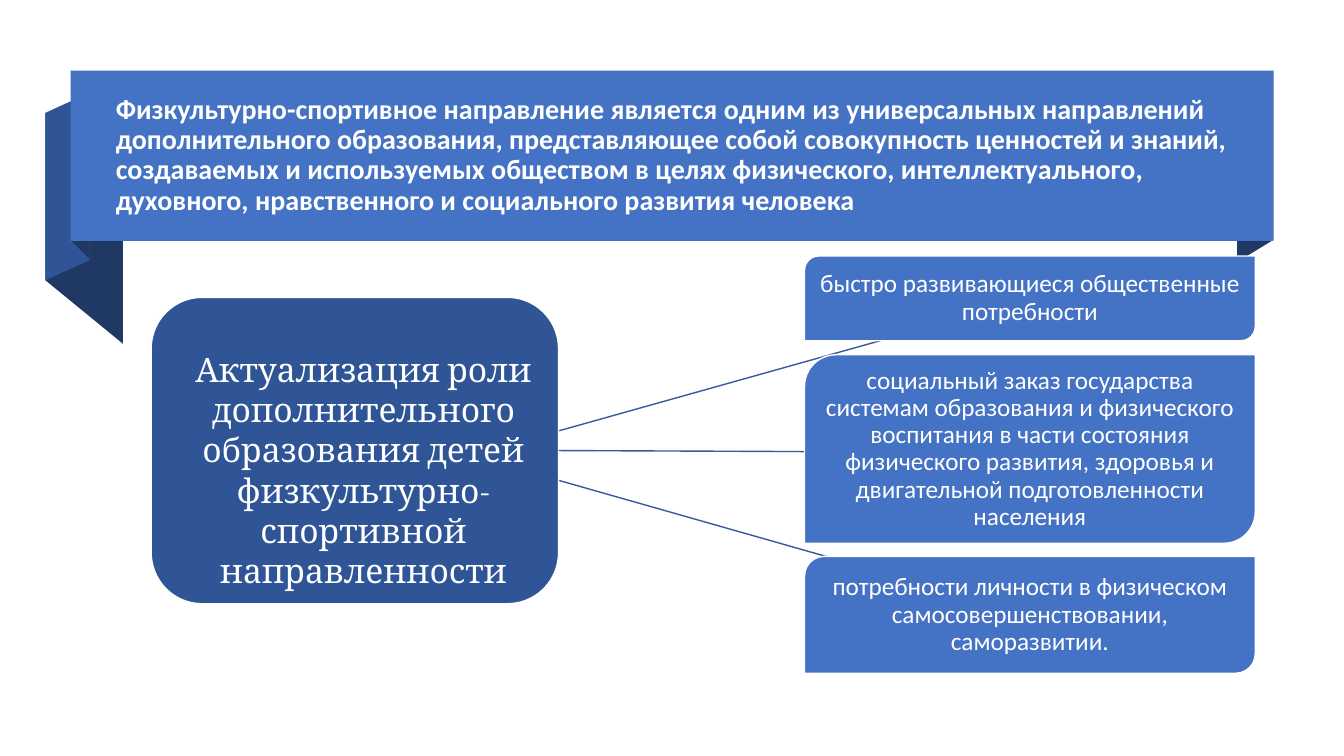
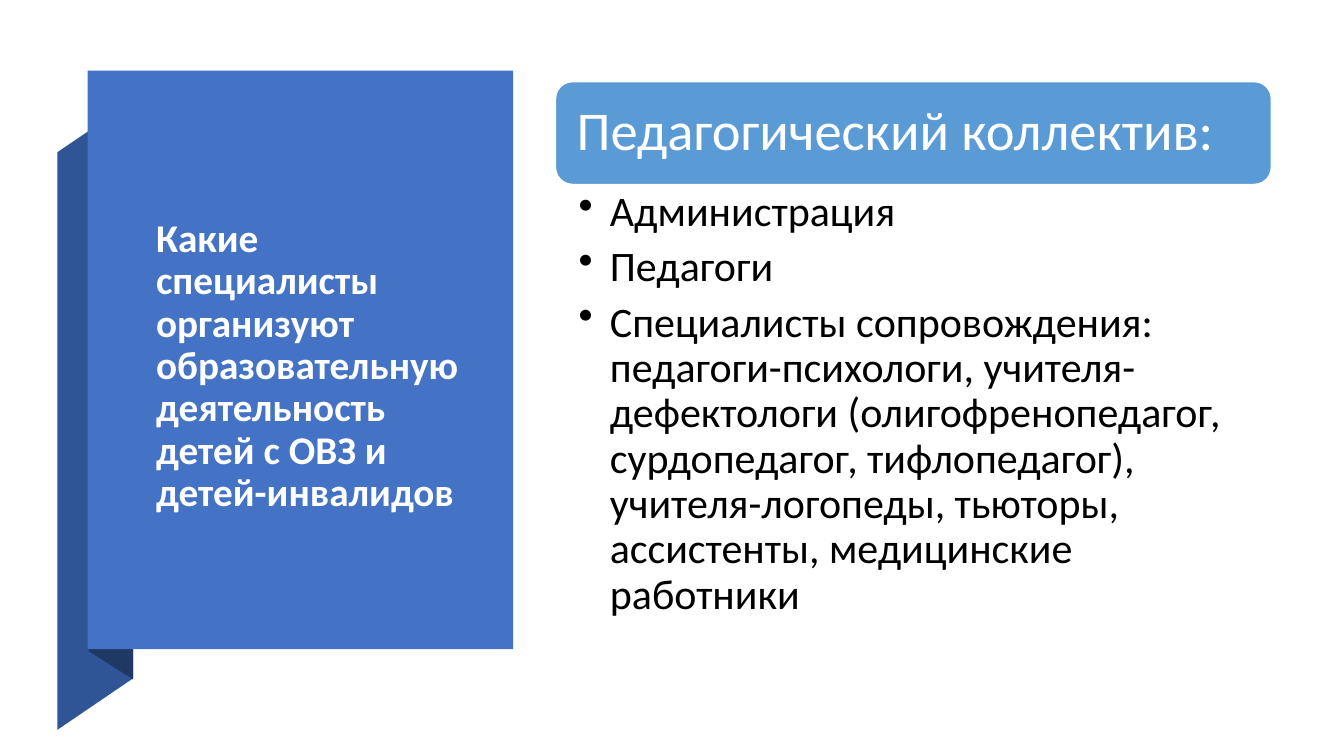
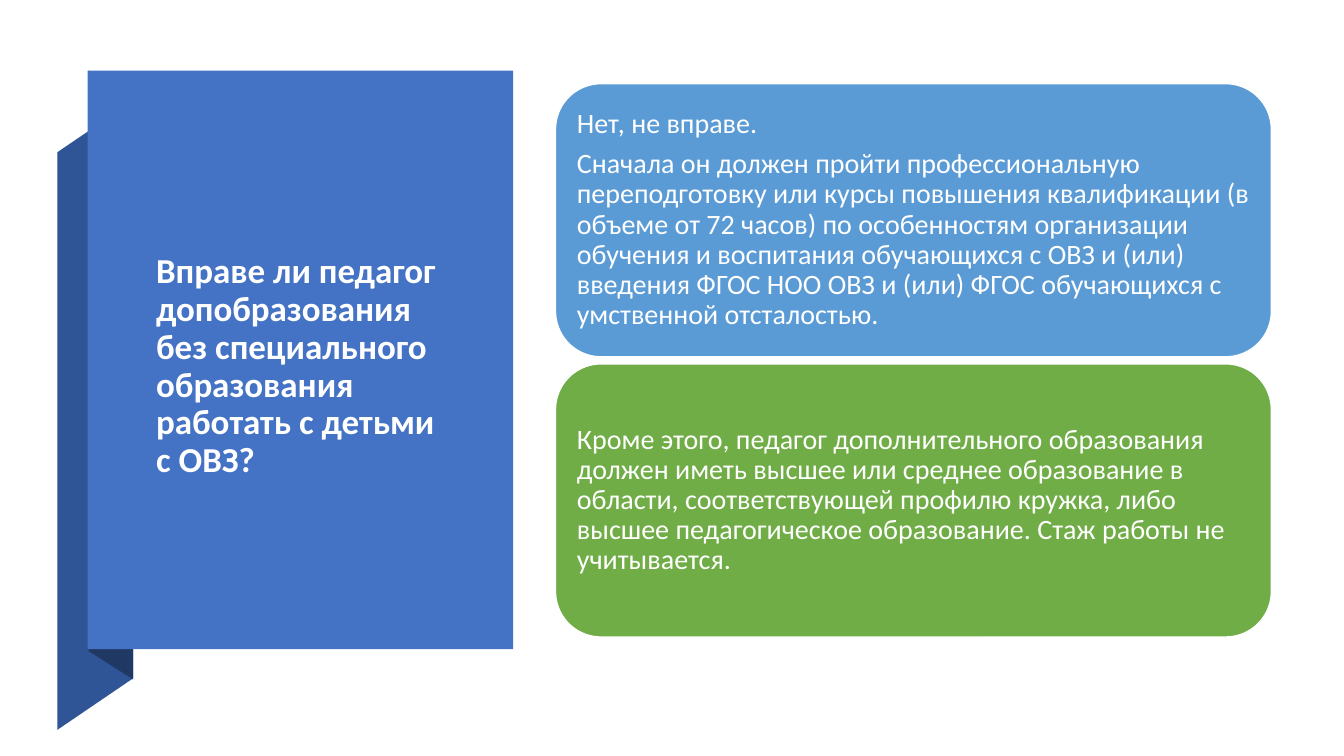
from lxml import etree
from pptx import Presentation
from pptx import util as u
from pptx.dml.color import RGBColor
from pptx.enum import shapes, text
from pptx.oxml import ns

NAVY, DEEP, BLUE = "203864", "2F5597", "4472C4"
SKY, GREEN, LINE = "5B9BD5", "70AD47", "365B9D"
WHITE, BLACK = "FFFFFF", "000000"
SANS, SERIF = "Calibri", "Cambria"
Kind, Align, Anchor = shapes.MSO_SHAPE, text.PP_ALIGN, text.MSO_ANCHOR
INSETS = (0.1, 0.05, 0.1, 0.05)
CARD_LEFT, CARD_WIDTH = 5.51, 7.1


def rgb(value):
    return RGBColor.from_string(value)


def inches(values):
    return [u.Inches(value) for value in values]


def paint(shape, fill, outline=None):
    shape.shadow.inherit = False
    shape.fill.solid()
    shape.fill.fore_color.rgb = rgb(fill)
    if outline:
        shape.line.color.rgb = rgb(outline)
        shape.line.width = u.Pt(1)
    else:
        shape.line.fill.background()


def write(shape, paragraphs, size, color=WHITE, font=SANS, bold=False,
          align=Align.LEFT, anchor=Anchor.MIDDLE, insets=INSETS,
          spacing=0.9, after=0, bullet=None):
    frame = shape.text_frame
    frame.word_wrap = True
    frame.vertical_anchor = anchor
    (frame.margin_left, frame.margin_top,
     frame.margin_right, frame.margin_bottom) = inches(insets)
    for index, wording in enumerate(paragraphs):
        paragraph = frame.add_paragraph() if index else frame.paragraphs[0]
        paragraph.alignment = align
        paragraph.line_spacing = spacing
        paragraph.space_after = u.Pt(after)
        if bullet:
            add_bullet(paragraph, bullet)
        run = paragraph.add_run()
        run.text = wording
        run.font.size = u.Pt(size)
        run.font.name = font
        run.font.bold = bold
        run.font.color.rgb = rgb(color)


def add_bullet(paragraph, char):
    props = paragraph._p.get_or_add_pPr()
    indent = u.Inches(0.31)
    props.set("marL", str(indent))
    props.set("indent", str(-indent))
    etree.SubElement(props, ns.qn("a:buChar")).set("char", char)


def add_block(slide, kind, box, fill, outline=None):
    block = slide.shapes.add_shape(kind, *inches(box))
    paint(block, fill, outline)
    return block


def add_text(slide, box, paragraphs, size, **style):
    write(slide.shapes.add_textbox(*inches(box)), paragraphs, size, **style)


def add_fold(slide, points, fill):
    start, *rest = [tuple(inches(point)) for point in points]
    builder = slide.shapes.build_freeform(*start, scale=1.0)
    builder.add_line_segments(rest, close=True)
    paint(builder.convert_to_shape(), fill)


def add_link(slide, start, end):
    link = slide.shapes.add_connector(
        shapes.MSO_CONNECTOR.STRAIGHT, *inches(start + end))
    link.line.color.rgb = rgb(LINE)
    link.line.width = u.Pt(1)
    etree.SubElement(link._element.spPr, ns.qn("a:effectLst"))
    return link


def add_card(slide, top, height, fill, paragraphs, size, inset):
    card = add_block(slide, Kind.ROUNDED_RECTANGLE,
                     (CARD_LEFT, top, CARD_WIDTH, height), fill, WHITE)
    write(card, paragraphs, size, insets=(inset,) * 4, after=7)


def add_side_title(slide, wording, size, width):
    add_fold(slide, [(0.57, 7.24), (1.32, 6.73), (1.32, 1), (0.57, 1.51)], DEEP)
    add_fold(slide, [(0.88, 6.46), (1.32, 6.74), (1.32, 0.99), (0.88, 0.7)], NAVY)
    add_block(slide, Kind.RECTANGLE, (0.87, 0.7, 4.22, 5.74), BLUE)
    add_text(slide, (1.45, 1.67, width, 3.94), [wording], size, bold=True)


def add_top_title(slide, wording):
    add_fold(slide, [(1.22, 3.41), (0.45, 2.78), (0.45, 1.12), (1.22, 1.75)], NAVY)
    add_fold(slide, [(0.89, 2.58), (0.45, 2.78), (0.45, 1.12), (0.89, 0.92)], DEEP)
    add_fold(slide, [(0.89, 2.57), (0.71, 2.39), (0.71, 0.7), (0.89, 0.89)], NAVY)
    add_fold(slide, [(12.63, 2.38), (12.27, 2.6), (12.27, 0.91), (12.63, 0.7)], NAVY)
    add_block(slide, Kind.RECTANGLE, (0.7, 0.7, 11.93, 1.69), BLUE)
    add_text(slide, (1.05, 0.88, 11.23, 1.33), [wording], 20, bold=True)


def build_role(slide):
    add_top_title(
        slide,
        "Физкультурно-спортивное направление является одним из универсальных "
        "направлений дополнительного образования, представляющее собой "
        "совокупность ценностей и знаний, создаваемых и используемых обществом "
        "в целях физического, интеллектуального, духовного, нравственного и "
        "социального развития человека")
    add_link(slide, (5.38, 4.72), (8.72, 5.67))
    add_link(slide, (5.38, 4.32), (8.98, 3.31))
    role = add_block(slide, Kind.ROUNDED_RECTANGLE,
                     (1.5, 2.95, 4.04, 3.04), DEEP, WHITE)
    add_link(slide, (5.54, 4.47), (7.98, 4.48)).begin_connect(role, 3)
    needs = [
        (2.54, 0.84, "быстро развивающиеся общественные потребности"),
        (3.52, 1.87, "социальный заказ государства системам образования и "
                     "физического воспитания в части состояния физического "
                     "развития, здоровья и двигательной подготовленности "
                     "населения"),
        (5.52, 1.16, "потребности личности в физическом "
                     "самосовершенствовании, саморазвитии."),
    ]
    for top, height, wording in needs:
        need = add_block(slide, Kind.ROUND_2_DIAG_RECTANGLE,
                         (7.98, top, 4.47, height), BLUE, WHITE)
        write(need, [wording], 18, align=Align.CENTER, insets=(0.01,) * 4)
    add_text(slide, (1.5, 3.41, 4.21, 2.52),
             ["Актуализация роли дополнительного образования детей "
              "физкультурно-спортивной направленности"],
             24, font=SERIF, align=Align.CENTER, anchor=Anchor.TOP, spacing=1.0)


def build_staff(slide):
    add_side_title(
        slide,
        "Какие специалисты организуют образовательную деятельность "
        "детей с ОВЗ и детей-инвалидов", 28, 3.35)
    add_card(slide, 0.81, 1.02, SKY, ["Педагогический коллектив:"], 39, 0.16)
    add_text(slide, (CARD_LEFT, 1.84, CARD_WIDTH, 4.5),
             ["Администрация", "Педагоги",
              "Специалисты сопровождения: педагоги-психологи, "
              "учителя-дефектологи (олигофренопедагог, сурдопедагог, "
              "тифлопедагог), учителя-логопеды, тьюторы, ассистенты, "
              "медицинские работники"],
             30, color=BLACK, anchor=Anchor.TOP,
             insets=(0.23, 0.05, 0.3, 0.05), after=7, bullet="•")


def build_rights(slide):
    add_side_title(
        slide,
        "Вправе ли педагог допобразования без специального образования "
        "работать с детьми с ОВЗ?", 25, 3.01)
    answers = [
        (SKY, ["Нет, не вправе.",
               "Сначала он должен пройти профессиональную переподготовку или "
               "курсы повышения квалификации (в объеме от 72 часов) "
               "по особенностям организации обучения и воспитания обучающихся "
               "с ОВЗ и (или) введения ФГОС НОО ОВЗ и (или) ФГОС обучающихся "
               "с умственной отсталостью."]),
        (GREEN, ["Кроме этого, педагог дополнительного образования должен "
                 "иметь высшее или среднее образование в области, "
                 "соответствующей профилю кружка, либо высшее педагогическое "
                 "образование. Стаж работы не учитывается."]),
    ]
    height, gap = 2.71, 0.07
    for row, (fill, paragraphs) in enumerate(answers):
        add_card(slide, 0.83 + row * (height + gap), height, fill,
                 paragraphs, 20, 0.08)


def main():
    deck = Presentation()
    deck.slide_width, deck.slide_height = inches((13.33, 7.5))
    for build in (build_role, build_staff, build_rights):
        build(deck.slides.add_slide(deck.slide_layouts[6]))
    deck.save("out.pptx")


if __name__ == "__main__":
    main()
